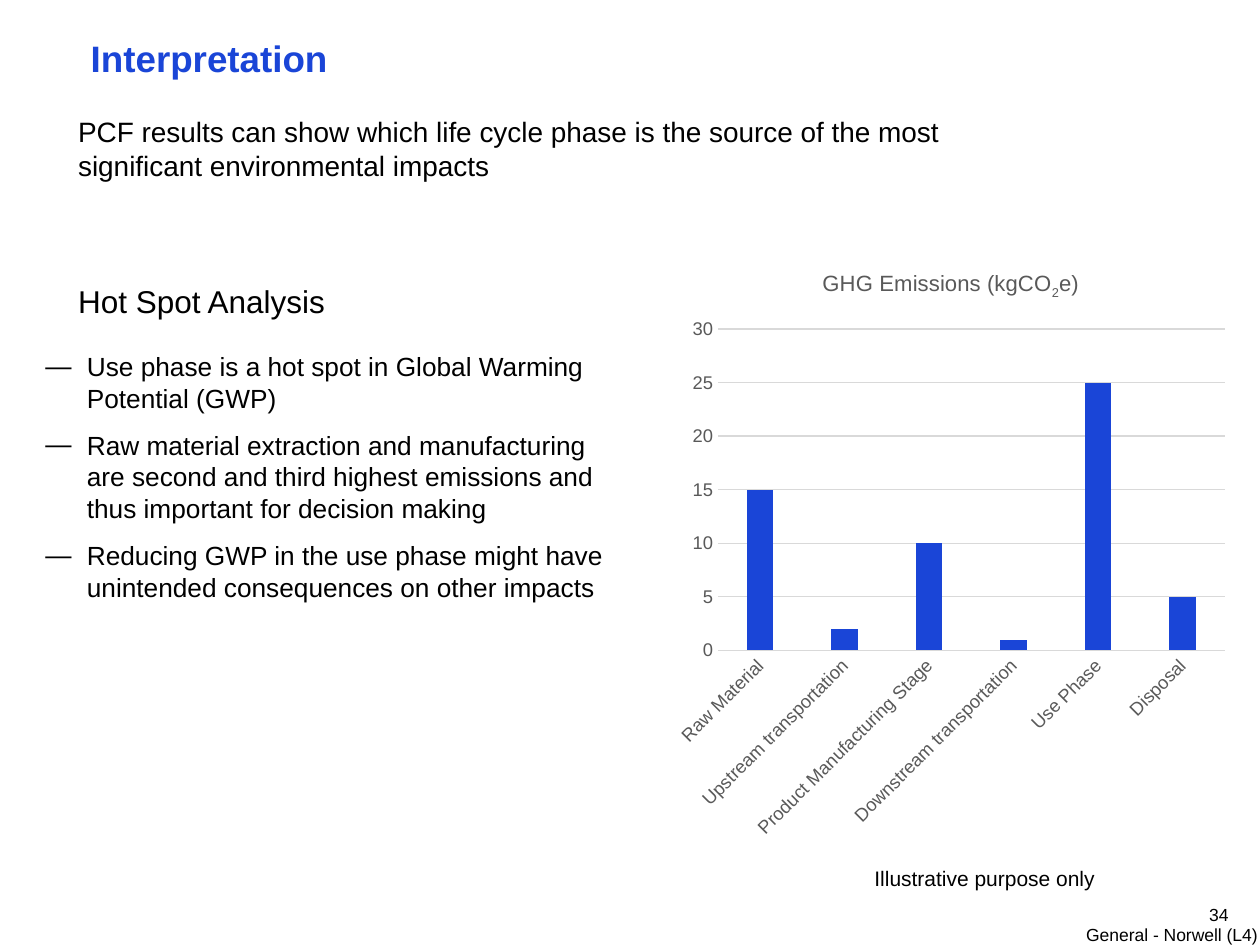
from lxml import etree
from pptx import Presentation
from pptx.chart.data import CategoryChartData
from pptx.dml.color import RGBColor
from pptx.enum.chart import XL_CHART_TYPE, XL_TICK_MARK
from pptx.enum.text import MSO_ANCHOR, PP_ALIGN
from pptx.oxml.ns import qn
from pptx.util import Inches, Pt

COLUMNS = XL_CHART_TYPE.COLUMN_CLUSTERED
NO_TICK = XL_TICK_MARK.NONE
LEFT, RIGHT = PP_ALIGN.LEFT, PP_ALIGN.RIGHT
TOP, MIDDLE = MSO_ANCHOR.TOP, MSO_ANCHOR.MIDDLE

COLORS = {"text": "000000", "accent": "1A45D7", "label": "595959", "grid": "D9D9D9"}


class SlideBuilder:
    """Holds the style and the current slide; boxes are in percent of the slide."""

    font_name = "Arial"

    def __init__(self, presentation):
        self.width = presentation.slide_width
        self.height = presentation.slide_height
        self.slide = presentation.slides.add_slide(presentation.slide_layouts[6])

    def place(self, box):
        left, top, width, height = (share / 100 for share in box)
        return (round(left * self.width), round(top * self.height),
                round(width * self.width), round(height * self.height))

    def style(self, font, size, color="text", bold=False):
        font.name = self.font_name
        font.size = Pt(size)
        font.bold = bold
        font.color.rgb = RGBColor.from_string(COLORS[color])

    def text(self, box, lines, size, color="text", bold=False, align=LEFT,
             anchor=TOP, wrap=True, spacing=None, after=0, bullet=None):
        frame = self.slide.shapes.add_textbox(*self.place(box)).text_frame
        frame.margin_left = frame.margin_right = 0
        frame.margin_top = frame.margin_bottom = 0
        frame.word_wrap = wrap
        frame.vertical_anchor = anchor
        frame.text = "\n".join(lines)
        for paragraph in frame.paragraphs:
            paragraph.alignment = align
            paragraph.line_spacing = spacing
            paragraph.space_after = Pt(after)
            if bullet:
                self.add_bullet(paragraph, bullet)
            for run in paragraph.runs:
                self.style(run.font, size, color, bold)

    def add_bullet(self, paragraph, character, indent=Inches(0.33)):
        properties = paragraph._p.get_or_add_pPr()
        properties.set("marL", str(indent))
        properties.set("indent", str(-indent))
        etree.SubElement(properties, qn("a:buFont")).set("typeface", self.font_name)
        etree.SubElement(properties, qn("a:buChar")).set("char", character)

    def line(self, line_format):
        line_format.color.rgb = RGBColor.from_string(COLORS["grid"])
        line_format.width = Pt(0.75)

    def column_chart(self, box, title, values, size, title_size):
        data = CategoryChartData()
        data.categories = list(values)
        data.add_series("Series 1", list(values.values()))
        chart = self.slide.shapes.add_chart(COLUMNS, *self.place(box), data).chart
        self.style(chart.font, size)
        chart.has_legend = False

        # Title: the middle part is a subscript
        chart.has_title = True
        paragraph = chart.chart_title.text_frame.paragraphs[0]
        for part, baseline in zip(title, (0, -25000, 0)):
            run = paragraph.add_run()
            run.text = part
            self.style(run.font, title_size, "label")
            run.font._element.set("baseline", str(baseline))
        chart.chart_title.include_in_layout = False

        # Columns
        plot = chart.plots[0]
        plot.vary_by_categories = False
        plot.gap_width = 219
        plot.overlap = -27
        fill = plot.series[0].format.fill
        fill.solid()
        fill.fore_color.rgb = RGBColor.from_string(COLORS["accent"])

        # Axes
        for axis in (chart.category_axis, chart.value_axis):
            axis.major_tick_mark = axis.minor_tick_mark = NO_TICK
            self.style(axis.tick_labels.font, size, "label")
        self.line(chart.category_axis.format.line)
        body = chart.category_axis._element.find(qn("c:txPr")).find(qn("a:bodyPr"))
        body.set("rot", str(-45 * 60000))
        body.set("vert", "horz")
        value_axis = chart.value_axis
        value_axis.minimum_scale, value_axis.maximum_scale = 0, 30
        value_axis.major_unit = 5
        value_axis.has_major_gridlines = True
        self.line(value_axis.major_gridlines.format.line)
        value_axis.format.line.fill.background()


def main():
    presentation = Presentation()
    presentation.slide_width, presentation.slide_height = Inches(10), Inches(7.5)
    builder = SlideBuilder(presentation)

    # Heading and lead
    builder.text((7.2, 4.27, 92.8, 7.73), ["Interpretation"], 21, "accent",
                 bold=True, spacing=0.9)
    builder.text((6.2, 12.13, 78.4, 12.4),
                 ["PCF results can show which life cycle phase is the source of "
                  "the most significant environmental impacts"], 16, after=6)

    # Findings
    builder.text((6.2, 29.87, 26.3, 3.87), ["Hot Spot Analysis"], 18)
    findings = [
        "Use phase is a hot spot in Global Warming Potential (GWP)",
        "Raw material extraction and manufacturing are second and third highest "
        "emissions and thus important for decision making",
        "Reducing GWP in the use phase might have unintended consequences on "
        "other impacts",
    ]
    builder.text((3.6, 37.07, 45.3, 42.4), findings, 15, after=9, bullet="—")

    # Emissions chart and its caption
    emissions = {
        "Raw Material": 15,
        "Upstream transportation": 2,
        "Product Manufacturing Stage": 10,
        "Downstream transportation": 1,
        "Use Phase": 25,
        "Disposal": 5,
    }
    builder.column_chart((52.8, 26.13, 45.3, 63.87), ("GHG Emissions (kgCO", "2", "e)"),
                         emissions, 10.5, 12.6)
    builder.text((69.4, 91.6, 30.6, 3.6), ["Illustrative purpose only"], 12)

    # Footer
    builder.text((92.5, 95.47, 5, 2.67), ["34"], 10, align=RIGHT, anchor=MIDDLE)
    builder.text((86.2, 97.73, 13.8, 2.27), ["General - Norwell (L4)"], 10, wrap=False)

    presentation.save("out.pptx")


if __name__ == "__main__":
    main()
